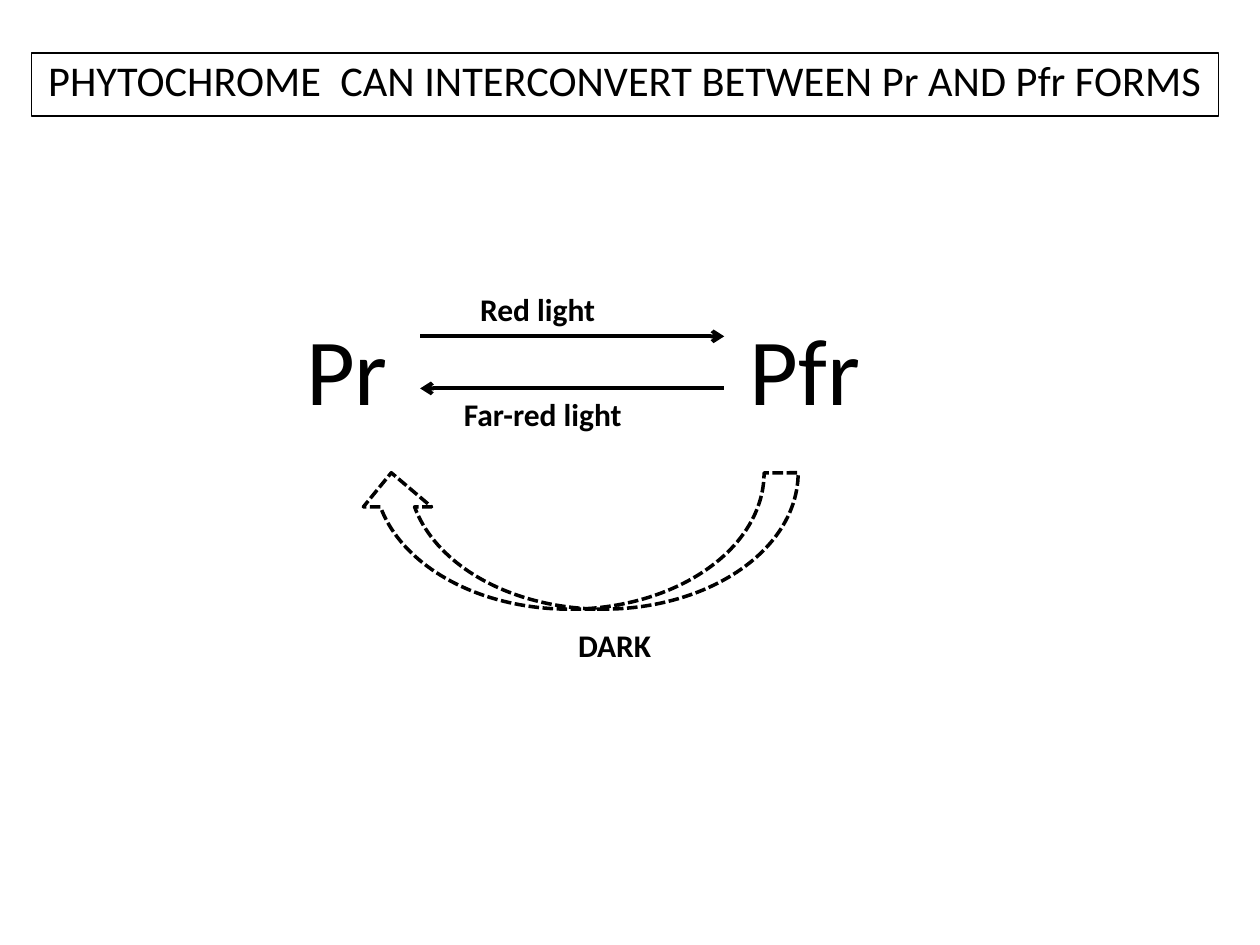
from lxml import etree
from pptx import Presentation
from pptx.dml.color import RGBColor
from pptx.enum import dml, shapes, text
from pptx.oxml.ns import qn
from pptx.util import Cm, Pt

# Content: lengths in cm, boxes as left, top, width, height
COLORS = {"ink": "000000"}
FONT = "Calibri"
TITLE = "PHYTOCHROME  CAN INTERCONVERT BETWEEN Pr AND Pfr FORMS"
TITLE_BOX = (0.64, 1.07, 23.93, 1.27)
FORMS = "Pr\tPfr"
FORMS_BOX = (5.92, 6.15, 12.07, 2.54)
PFR_TAB = 8.93
LEFT, CENTER = text.PP_ALIGN.LEFT, text.PP_ALIGN.CENTER
CONDITIONS = [
    ("Red light", (9.43, 5.72, 4.77, 1.02), LEFT),
    ("Far-red light", (9.1, 7.83, 5.72, 1.02), LEFT),
    ("DARK", (9.53, 12.5, 5.72, 1.02), CENTER),
]
ARROW_LEFT, ARROW_RIGHT = 8.47, 14.6
LIGHT_ARROWS = [(6.78, "tailEnd"), (7.83, "headEnd")]  # height, end with the tip
DARK_ARROW_BOX = (7.2, 9.53, 8.89, 2.75)

INK = RGBColor.from_string(COLORS["ink"])


def write(frame, words, size, bold=False, align=LEFT):
    frame.word_wrap = True
    paragraph = frame.paragraphs[0]
    paragraph.text = words
    paragraph.alignment = align
    font = paragraph.font
    font.name, font.size, font.bold = FONT, Pt(size), bold
    font.color.rgb = INK
    return paragraph


def add_label(slide, words, box, size, bold=False, align=LEFT):
    label = slide.shapes.add_textbox(*map(Cm, box))
    return write(label.text_frame, words, size, bold, align)


def add_outline(slide, kind, box, width):
    outline = slide.shapes.add_shape(kind, *map(Cm, box))
    outline.shadow.inherit = False
    outline.fill.background()
    outline.line.color.rgb = INK
    outline.line.width = Pt(width)
    return outline


def add_light_arrow(slide, y, tip):
    arrow = slide.shapes.add_connector(
        shapes.MSO_CONNECTOR.STRAIGHT, Cm(ARROW_LEFT), Cm(y), Cm(ARROW_RIGHT), Cm(y))
    arrow.line.color.rgb = INK
    arrow.line.width = Pt(2.25)
    etree.SubElement(arrow.line._get_or_add_ln(), qn(f"a:{tip}"), type="arrow")
    etree.SubElement(arrow._element.spPr, qn("a:effectLst"))


def main():
    deck = Presentation()
    deck.slide_width, deck.slide_height = Cm(25.4), Cm(19.05)
    slide = deck.slides.add_slide(deck.slide_layouts[6])

    # Framed title
    title = add_outline(slide, shapes.MSO_SHAPE.RECTANGLE, TITLE_BOX, 0.75)
    title.text_frame.vertical_anchor = text.MSO_ANCHOR.MIDDLE
    write(title.text_frame, TITLE, 24.2, align=CENTER).line_spacing = 0.8

    # The two forms, set apart by a tab stop
    forms = add_label(slide, FORMS, FORMS_BOX, 54)
    tabs = etree.Element(qn("a:tabLst"))
    etree.SubElement(tabs, qn("a:tab"), pos=str(Cm(PFR_TAB)), algn="l")
    forms._p.get_or_add_pPr().insert(0, tabs)

    # Light and dark conversions
    for y, tip in LIGHT_ARROWS:
        add_light_arrow(slide, y, tip)
    dark_arrow = add_outline(
        slide, shapes.MSO_SHAPE.CURVED_DOWN_ARROW, DARK_ARROW_BOX, 2)
    dark_arrow.rotation = 180
    dark_arrow.line.dash_style = dml.MSO_LINE.SQUARE_DOT
    for words, box, align in CONDITIONS:
        add_label(slide, words, box, 18, bold=True, align=align)

    deck.save("out.pptx")


if __name__ == "__main__":
    main()
